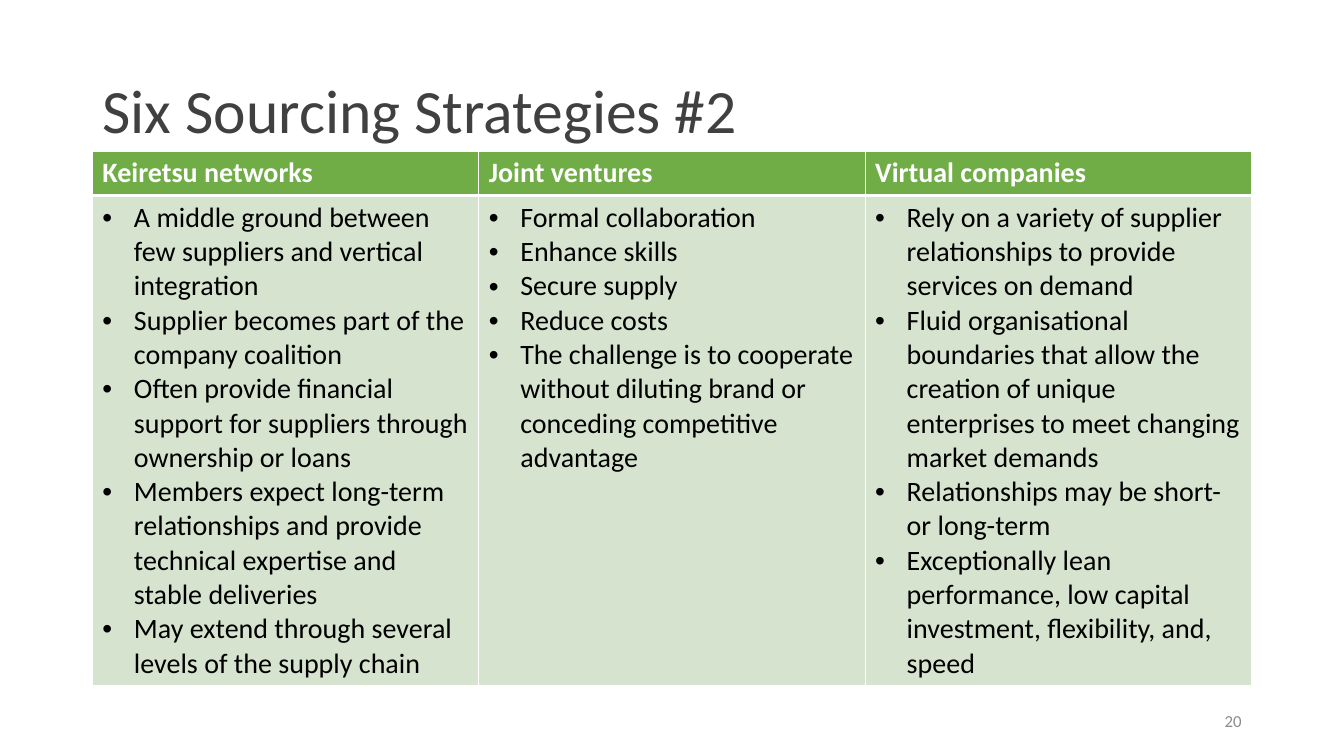
from dataclasses import dataclass

from lxml import etree
from pptx import Presentation
from pptx.dml.color import RGBColor
from pptx.enum.text import MSO_ANCHOR, MSO_AUTO_SIZE, PP_ALIGN
from pptx.oxml.ns import qn
from pptx.util import Pt

LEFT, RIGHT = PP_ALIGN.LEFT, PP_ALIGN.RIGHT
MIDDLE = MSO_ANCHOR.MIDDLE
NO_AUTOFIT = MSO_AUTO_SIZE.NONE

TITLE_FONT = {"name": "Calibri", "size": Pt(44), "bold": False}
HEADER_FONT = {"name": "Calibri", "size": Pt(20), "bold": True}
BODY_FONT = {"name": "Calibri", "size": Pt(20), "bold": False}
NUMBER_FONT = {"name": "Calibri", "size": Pt(12), "bold": False}
MARGIN, WIDTH = 66, 828
HEADER_HEIGHT, BODY_HEIGHT = 31.6, 349
INDENT = 22.5


@dataclass
class Strategy:
    name: str
    points: list[str]


STRATEGIES = [
    Strategy("Keiretsu networks", [
        "A middle ground between few suppliers and vertical integration",
        "Supplier becomes part of the company coalition",
        "Often provide financial support for suppliers through ownership or loans",
        "Members expect long-term relationships and provide technical expertise and stable deliveries",
        "May extend through several levels of the supply chain",
    ]),
    Strategy("Joint ventures", [
        "Formal collaboration",
        "Enhance skills",
        "Secure supply",
        "Reduce costs",
        "The challenge is to cooperate without diluting brand or conceding competitive advantage",
    ]),
    Strategy("Virtual companies", [
        "Rely on a variety of supplier relationships to provide services on demand",
        "Fluid organisational boundaries that allow the creation of unique enterprises to meet changing market demands",
        "Relationships may be short- or long-term",
        "Exceptionally lean performance, low capital investment, flexibility, and, speed",
    ]),
]


def rgb(color: str) -> RGBColor:
    return RGBColor.from_string(color)


def format_font(font, values: dict, color: str) -> None:
    for name, value in values.items():
        setattr(font, name, value)
    font.color.rgb = rgb(color)


def add_bullet(p) -> None:
    pPr = p._p.get_or_add_pPr()
    pPr.set("marL", str(Pt(INDENT)))
    pPr.set("indent", str(-Pt(INDENT)))
    etree.SubElement(pPr, qn("a:buFont"), typeface="Arial")
    etree.SubElement(pPr, qn("a:buChar"), char="•")


def style_cell(cell, fill: str, bottom: float) -> None:
    tcPr = cell._tc.get_or_add_tcPr()
    for side, width in (("L", 1), ("R", 1), ("T", 1), ("B", bottom)):
        ln = etree.SubElement(tcPr, qn(f"a:ln{side}"), w=str(Pt(width)))
        line_fill = etree.SubElement(ln, qn("a:solidFill"))
        etree.SubElement(line_fill, qn("a:srgbClr"), val="FFFFFF")
    cell.fill.solid()
    cell.fill.fore_color.rgb = rgb(fill)


def write_cell(cell, lines: list[str], values: dict, color: str, bullets: bool) -> None:
    tf = cell.text_frame
    for i, line in enumerate(lines):
        p = tf.add_paragraph() if i else tf.paragraphs[0]
        if bullets:
            add_bullet(p)
        r = p.add_run()
        r.text = line
        format_font(r.font, values, color)


def write_line(shape, text: str, align, values: dict, color: str):
    tf = shape.text_frame
    tf.word_wrap = True
    tf.auto_size = NO_AUTOFIT
    tf.vertical_anchor = MIDDLE
    p = tf.paragraphs[0]
    p.alignment = align
    r = p.add_run()
    r.text = text
    format_font(r.font, values, color)
    return p


def add_strategy_table(s, strategies: list[Strategy]) -> None:
    height = HEADER_HEIGHT + BODY_HEIGHT
    table = s.shapes.add_table(2, len(strategies), Pt(MARGIN), Pt(108), Pt(WIDTH), Pt(height)).table
    table.horz_banding = False
    table.rows[0].height = Pt(HEADER_HEIGHT)
    table.rows[1].height = Pt(BODY_HEIGHT)
    for i, strategy in enumerate(strategies):
        table.columns[i].width = Pt(WIDTH / len(strategies))
        header, body = table.cell(0, i), table.cell(1, i)
        style_cell(header, "70AD47", 3)
        write_cell(header, [strategy.name], HEADER_FONT, "FFFFFF", False)
        style_cell(body, "D5E3CF", 1)
        write_cell(body, strategy.points, BODY_FONT, "000000", True)


def main() -> None:
    prs = Presentation()
    prs.slide_width, prs.slide_height = Pt(960), Pt(540)
    s = prs.slides.add_slide(prs.slide_layouts[5])

    title = s.shapes.title
    title.left, title.top, title.width, title.height = Pt(MARGIN), Pt(28.8), Pt(WIDTH), Pt(104.4)
    p = write_line(title, "Six Sourcing Strategies #2", LEFT, TITLE_FONT, "404041")
    p.line_spacing = 0.9

    add_strategy_table(s, STRATEGIES)

    number = s.shapes.add_textbox(Pt(678), Pt(500.4), Pt(216), Pt(28.8))
    write_line(number, "20", RIGHT, NUMBER_FONT, "8C8C8C")
    prs.save("out.pptx")


if __name__ == "__main__":
    main()
